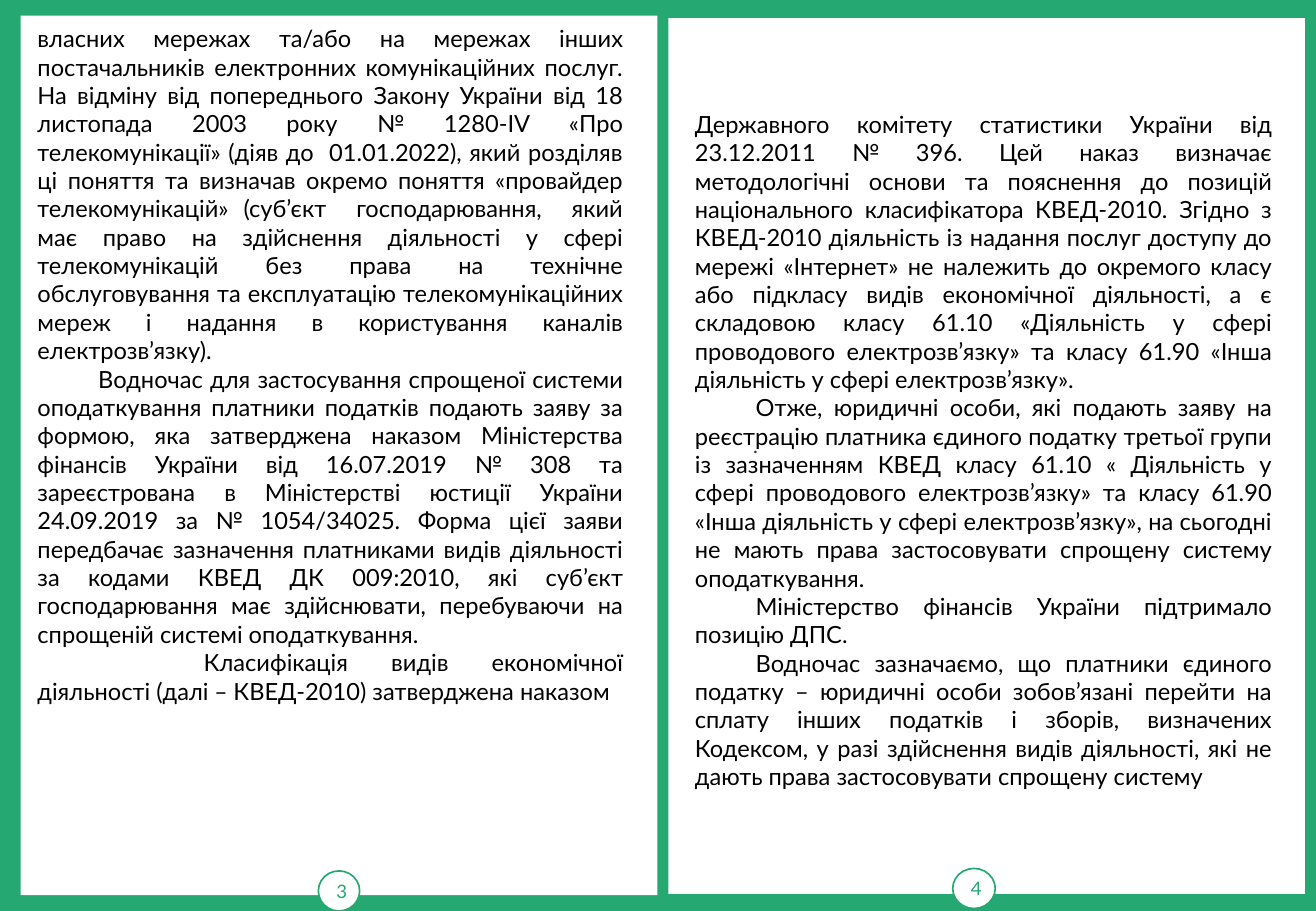
from pptx import Presentation
from pptx.dml.color import RGBColor
from pptx.enum.shapes import MSO_SHAPE as Shape
from pptx.enum.text import MSO_ANCHOR as Anchor, PP_ALIGN as Align
from pptx.util import Pt

COLORS = {"green": "25A872", "white": "FFFFFF", "black": "000000", "gray": "333333"}
FONT = "Lato"
INDENT = 36

# Page number, sheet frame and number badge frame (left, top, width, height)
SHEETS = [
    ("3", (12.24, 9.36, 377.28, 521.28), (188.64, 516.24, 24.48, 23.76)),
    ("4", (396, 10.8, 377.28, 519.12), (564.48, 514.8, 25.2, 23.76)),
]

# Each paragraph: first-line indent, text
LEFT_TEXT = [
    (0, "власних мережах та/або на мережах інших постачальників електронних "
        "комунікаційних послуг. На відміну від попереднього Закону України від "
        "18 листопада 2003 року № 1280-IV «Про телекомунікації» (діяв до  01.01.2022), "
        "який розділяв ці поняття та визначав окремо поняття «провайдер "
        "телекомунікацій» (суб’єкт  господарювання,  який має право на здійснення "
        "діяльності у сфері телекомунікацій без права на технічне обслуговування та "
        "експлуатацію телекомунікаційних мереж і надання в користування каналів "
        "електрозв’язку)."),
    (INDENT, "Водночас для застосування спрощеної системи оподаткування платники "
             "податків подають заяву за формою, яка затверджена наказом Міністерства "
             "фінансів України від 16.07.2019 № 308 та зареєстрована в Міністерстві "
             "юстиції України 24.09.2019 за № 1054/34025. Форма цієї заяви передбачає "
             "зазначення платниками видів діяльності за кодами КВЕД ДК 009:2010, які "
             "суб’єкт господарювання має здійснювати, перебуваючи на спрощеній "
             "системі оподаткування."),
    (98.5, "Класифікація видів економічної діяльності (далі ‒ КВЕД-2010) "
           "затверджена наказом"),
]
RIGHT_TEXT = [
    (0, "Державного комітету статистики України від 23.12.2011 № 396. Цей наказ "
        "визначає методологічні основи та пояснення до позицій національного "
        "класифікатора КВЕД-2010. Згідно з КВЕД-2010 діяльність із надання послуг "
        "доступу до мережі «Інтернет» не належить до окремого класу або підкласу "
        "видів економічної діяльності, а є складовою класу 61.10 «Діяльність у сфері "
        "проводового електрозв’язку» та класу 61.90 «Інша діяльність у сфері "
        "електрозв’язку»."),
    (INDENT, "Отже, юридичні особи, які подають заяву на реєстрацію платника єдиного "
             "податку третьої групи із зазначенням КВЕД класу 61.10 « Діяльність у "
             "сфері проводового електрозв’язку» та класу 61.90 «Інша діяльність у "
             "сфері електрозв’язку», на сьогодні не мають права застосовувати "
             "спрощену систему оподаткування."),
    (INDENT, "Міністерство фінансів України підтримало позицію ДПС."),
    (INDENT, "Водночас зазначаємо, що платники єдиного податку – юридичні особи "
             "зобов’язані перейти на сплату інших податків і зборів, визначених "
             "Кодексом, у разі здійснення видів діяльності, які не дають права "
             "застосовувати спрощену систему"),
]


def color(name):
    return RGBColor.from_string(COLORS[name])


def points(frame):
    return [Pt(value) for value in frame]


def set_values(target, values):
    for name, value in values.items():
        setattr(target, name, value)


def write(para, text, size, ink, align, indent=0):
    if indent:
        para._p.get_or_add_pPr().set("indent", str(Pt(indent)))
    para.alignment = align
    span = para.add_run()
    span.text = text
    set_values(span.font, {"name": FONT, "size": Pt(size)})
    span.font.color.rgb = color(ink)


def add_white_shape(group, kind, frame):
    shape = group.shapes.add_shape(kind, *points(frame))
    shape.shadow.inherit = False
    shape.fill.solid()
    shape.fill.fore_color.rgb = color("white")
    shape.line.fill.background()
    return shape


def add_sheet(page, number, sheet_frame, badge_frame):
    group = page.shapes.add_group_shape()
    add_white_shape(group, Shape.RECTANGLE, sheet_frame)
    badge = add_white_shape(group, Shape.OVAL, badge_frame)
    badge.line.color.rgb = color("green")
    badge.line.width = Pt(1)
    badge.text_frame.vertical_anchor = Anchor.MIDDLE
    write(badge.text_frame.paragraphs[0], number, 11, "green", Align.CENTER)


def add_text(page, frame, paragraphs, anchor, size=14, ink="black", spacing=1.0):
    box = page.shapes.add_textbox(*points(frame))
    set_values(box.text_frame, {"word_wrap": True, "vertical_anchor": anchor})
    for index, (indent, text) in enumerate(paragraphs):
        para = box.text_frame.add_paragraph() if index else box.text_frame.paragraphs[0]
        write(para, text, size, ink, Align.JUSTIFY, indent)
        para.line_spacing = spacing


def main():
    deck = Presentation()
    set_values(deck, {"slide_width": Pt(779.76), "slide_height": Pt(540)})
    page = deck.slides.add_slide(deck.slide_layouts[6])
    page.background.fill.solid()
    page.background.fill.fore_color.rgb = color("green")

    # White sheets with numbered badges
    for sheet in SHEETS:
        add_sheet(page, *sheet)

    # Body text
    add_text(page, (403.92, 16.56, 361.44, 492.48), [(35.28, ".")], Anchor.MIDDLE,
             size=12, ink="gray", spacing=1.15)
    add_text(page, (404.64, 8.64, 356.4, 516.24), RIGHT_TEXT, Anchor.MIDDLE)
    add_text(page, (15.12, 10.8, 361.44, 532.8), LEFT_TEXT, Anchor.TOP)

    deck.save("out.pptx")


if __name__ == "__main__":
    main()
